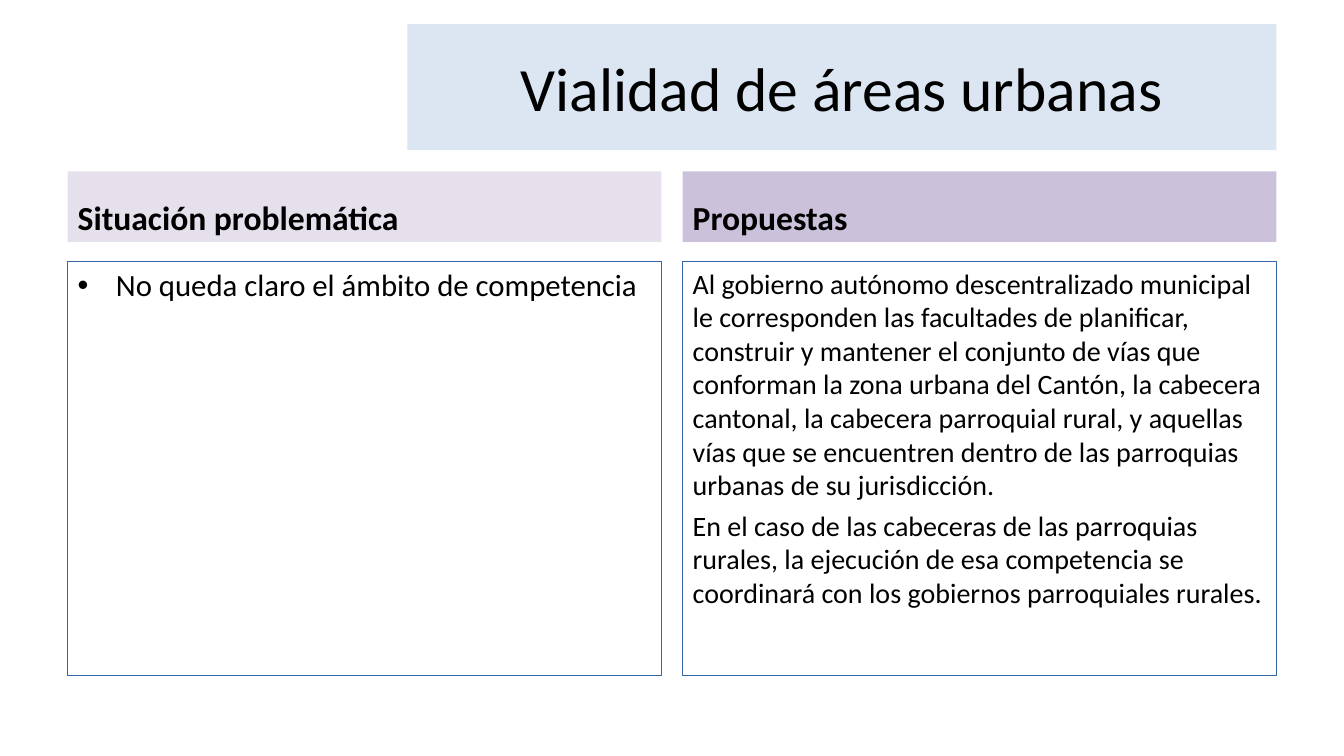
from collections import namedtuple

from lxml.etree import SubElement
from pptx import Presentation
from pptx.dml.color import RGBColor
from pptx.enum.text import MSO_ANCHOR as Anchor, MSO_AUTO_SIZE as AutoSize, PP_ALIGN as Align
from pptx.oxml.ns import qn
from pptx.util import Pt

EMU_PER_PX = 9144  # 100 px to the inch
COMPARISON_LAYOUT = 4

Box = namedtuple("Box", "left top width height")

THEME = {
    "font": "Calibri",
    "text": RGBColor.from_string("000000"),
    "title_fill": RGBColor.from_string("DCE6F2"),
    "problem_fill": RGBColor.from_string("E6E0EC"),
    "proposal_fill": RGBColor.from_string("CCC1DA"),
    "border": RGBColor.from_string("3465A4"),
    "border_width": Pt(0.75),
    "paragraph_gap": Pt(4.8),
    "title_size": Pt(44),
    "heading_size": Pt(24),
    "problem_size": Pt(22),
    "proposal_size": Pt(20),
}

TITLE_BOX = Box(404, 24, 862, 125)
COLUMNS_BOX = Box(67, 170, 1199, 500)
COLUMN_GAP = 21
HEADING_HEIGHT = 70
BODY_OFFSET = 89
BULLET_INDENT = 38

COLUMNS = [
    {
        "heading": "Situación problemática",
        "fill": "problem_fill",
        "size": "problem_size",
        "bulleted": True,
        "paragraphs": ["No queda claro el ámbito de competencia"],
    },
    {
        "heading": "Propuestas",
        "fill": "proposal_fill",
        "size": "proposal_size",
        "bulleted": False,
        "paragraphs": [
            "Al gobierno autónomo descentralizado municipal le corresponden las "
            "facultades de planificar, construir y mantener el conjunto de vías que "
            "conforman la zona urbana del Cantón, la cabecera cantonal, la cabecera "
            "parroquial rural, y aquellas vías que se encuentren dentro de las "
            "parroquias urbanas de su jurisdicción.",
            "En el caso de las cabeceras de las parroquias rurales, la ejecución de "
            "esa competencia se coordinará con los gobiernos parroquiales rurales.",
        ],
    },
]


def px(length):
    return length * EMU_PER_PX


def set_attributes(target, values):
    for name, value in values.items():
        setattr(target, name, value)


def place(shape, box):
    set_attributes(shape, {name: px(value) for name, value in box._asdict().items()})


def set_bullet(paragraph, bulleted):
    properties = paragraph._p.get_or_add_pPr()
    indent = px(BULLET_INDENT) if bulleted else 0
    properties.set("marL", str(indent))
    properties.set("indent", str(-indent))
    if bulleted:
        SubElement(properties, qn("a:buChar"), char="•")
    else:
        SubElement(properties, qn("a:buNone"))


def write(shape, paragraphs, size, anchor, bold=False, align=Align.LEFT, bulleted=False):
    frame = shape.text_frame
    frame.text = "\n".join(paragraphs)
    set_attributes(frame, {"word_wrap": True, "auto_size": AutoSize.NONE,
                           "vertical_anchor": anchor})
    for number, paragraph in enumerate(frame.paragraphs):
        set_bullet(paragraph, bulleted)
        set_attributes(paragraph, {
            "alignment": align,
            "space_before": THEME["paragraph_gap"] if number else Pt(0),
        })
        for run in paragraph.runs:
            set_attributes(run.font, {"name": THEME["font"], "size": THEME[size],
                                      "bold": bold})
            run.font.color.rgb = THEME["text"]


def fill(shape, color):
    shape.fill.solid()
    shape.fill.fore_color.rgb = THEME[color]


def add_title(shape, box):
    place(shape, box)
    fill(shape, "title_fill")
    write(shape, ["Vialidad de áreas urbanas"], "title_size", Anchor.MIDDLE,
          align=Align.CENTER)


def add_column(heading, body, box, column):
    # Heading band
    place(heading, box._replace(height=HEADING_HEIGHT))
    fill(heading, column["fill"])
    write(heading, [column["heading"]], "heading_size", Anchor.BOTTOM, bold=True)

    # Bordered body
    place(body, box._replace(top=box.top + BODY_OFFSET, height=box.height - BODY_OFFSET))
    body.line.color.rgb = THEME["border"]
    body.line.width = THEME["border_width"]
    write(body, column["paragraphs"], column["size"], Anchor.TOP,
          bulleted=column["bulleted"])


def add_comparison_slide(presentation):
    slide = presentation.slides.add_slide(presentation.slide_layouts[COMPARISON_LAYOUT])
    title, *column_parts = slide.placeholders
    add_title(title, TITLE_BOX)

    # Two equal columns
    width = (COLUMNS_BOX.width - COLUMN_GAP) // len(COLUMNS)
    for number, column in enumerate(COLUMNS):
        left = COLUMNS_BOX.left + number * (width + COLUMN_GAP)
        heading, body = column_parts[2 * number:2 * number + 2]
        add_column(heading, body, COLUMNS_BOX._replace(left=left, width=width), column)


def main():
    presentation = Presentation()
    set_attributes(presentation, {"slide_width": px(1333), "slide_height": px(750)})
    add_comparison_slide(presentation)
    presentation.save("out.pptx")


if __name__ == "__main__":
    main()
